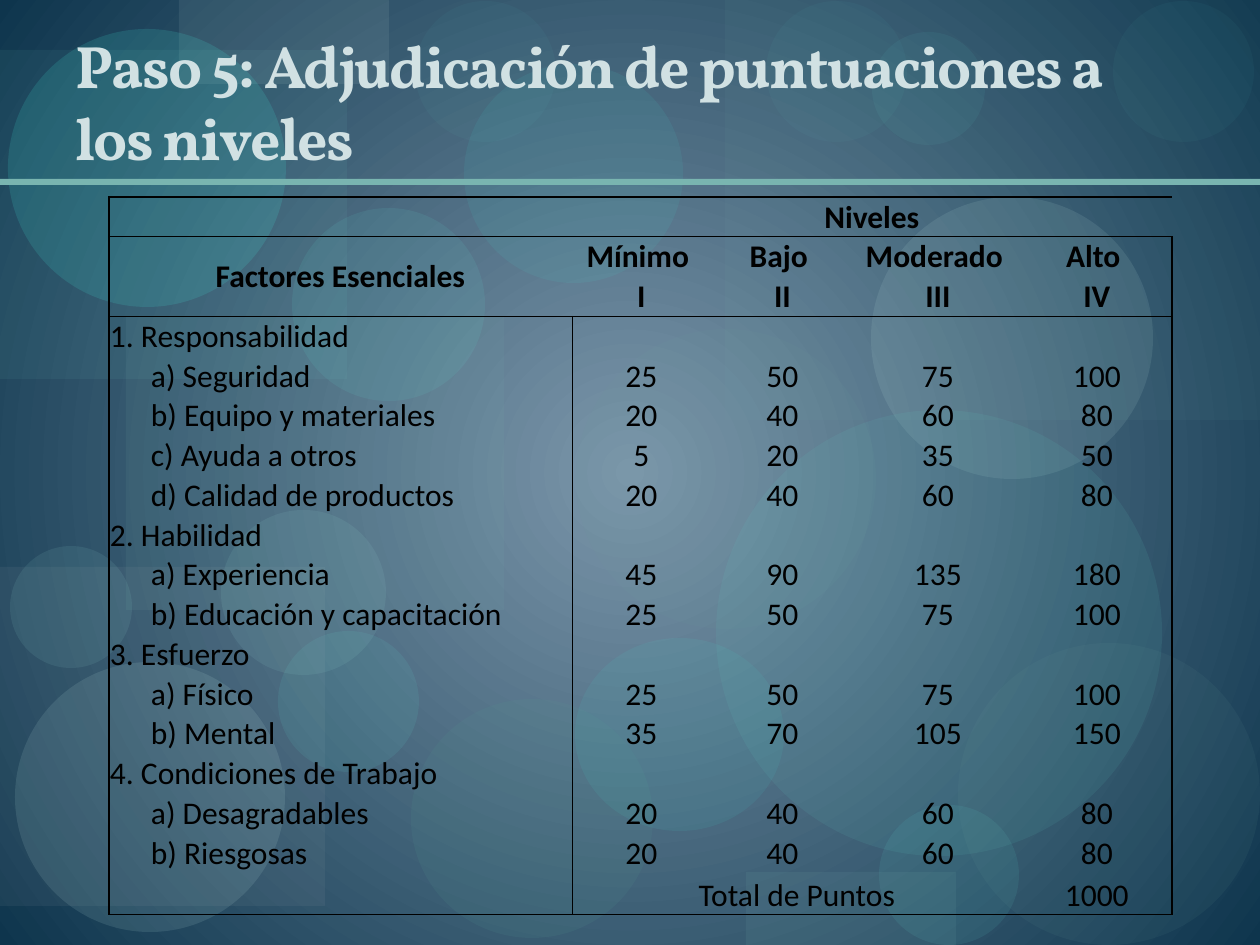
"""Build the slide on scoring the levels of each essential factor."""
from lxml import etree
from pptx import Presentation
from pptx import util as u
from pptx.dml.color import RGBColor
from pptx.enum import shapes, text
from pptx.oxml import parse_xml
from pptx.oxml.ns import nsdecls, qn

BLACK = RGBColor(0, 0, 0)
PALE = RGBColor(0xD1, 0xE1, 0xE3)
CORE = RGBColor(0x7B, 0x96, 0xAA)
EDGE = RGBColor(0x0E, 0x35, 0x4D)
SAGE = RGBColor(0x79, 0xB5, 0xB0)
TEAL = RGBColor(0x54, 0x97, 0x91)
GREY = RGBColor(0xB2, 0xB7, 0xBA)
MOSS = RGBColor(0x70, 0xA3, 0x9E)
AQUA = RGBColor(0x65, 0xE8, 0xDC)
MIST = RGBColor(0xC1, 0xE8, 0xE4)
CYAN = RGBColor(0x44, 0xEA, 0xDC)
MINT = RGBColor(0x77, 0xD6, 0xCE)
HAZE = RGBColor(0xBE, 0xD7, 0xD4)
FOAM = RGBColor(0x97, 0xDC, 0xD6)
JADE = RGBColor(0x61, 0xCD, 0xC4)

BOX, DOT = shapes.MSO_SHAPE.RECTANGLE, shapes.MSO_SHAPE.OVAL
LEFT, MID = text.PP_ALIGN.LEFT, text.PP_ALIGN.CENTER
LOW, HALF = text.MSO_ANCHOR.BOTTOM, text.MSO_ANCHOR.MIDDLE

DECOR = [
    (BOX, 126, 316, 378, 294, SAGE, 9),
    (DOT, 411, 699, 242, 239, TEAL, 13),
    (BOX, 725, 0, 535, 420, SAGE, 6),
    (BOX, 0, 567, 325, 339, GREY, 8),
    (DOT, 576, 329, 300, 300, MOSS, 8),
    (DOT, 879, 805, 140, 140, AQUA, 9),
    (DOT, 871, 197, 282, 282, MIST, 11),
    (DOT, 15, 662, 270, 270, MIST, 12),
    (DOT, 278, 631, 141, 141, AQUA, 9),
    (DOT, 575, 638, 209, 193, CYAN, 8),
    (BOX, 0, 50, 347, 329, MINT, 7),
    (BOX, 179, 0, 210, 84, HAZE, 10),
    (DOT, 8, 29, 278, 278, CYAN, 15),
    (DOT, 10, 546, 122, 122, FOAM, 10),
    (DOT, 292, 208, 193, 193, AQUA, 9),
    (DOT, 464, 64, 219, 219, CYAN, 8),
    (DOT, 716, 410, 446, 446, JADE, 10),
    (DOT, 766, 1, 141, 141, AQUA, 4),
    (DOT, 958, 643, 302, 302, MOSS, 8),
    (DOT, 221, 510, 165, 165, FOAM, 10),
    (DOT, 872, 32, 113, 113, AQUA, 6),
    (DOT, 1113, 1, 141, 141, AQUA, 4),
    (BOX, 746, 872, 210, 73, SAGE, 10),
    (DOT, 415, 1, 141, 141, AQUA, 4),
    (BOX, 0, 179, 1260, 6, SAGE, 100),
]
TITLE = "Paso 5: Adjudicación de puntuaciones a los niveles"
HEADS = [("Mínimo ", "I"), ("Bajo ", "II"), ("Moderado ", "III"), ("Alto ", "IV")]
GROUPS = [
    ("1. Responsabilidad", [
        ("a) Seguridad", 25, 50, 75, 100),
        ("b) Equipo y materiales", 20, 40, 60, 80),
        ("c) Ayuda a otros", 5, 20, 35, 50),
        ("d) Calidad de productos", 20, 40, 60, 80)]),
    ("2. Habilidad", [
        ("a) Experiencia", 45, 90, 135, 180),
        ("b) Educación y capacitación", 25, 50, 75, 100)]),
    ("3. Esfuerzo", [
        ("a) Físico", 25, 50, 75, 100),
        ("b) Mental", 35, 70, 105, 150)]),
    ("4. Condiciones de Trabajo", [
        ("a) Desagradables", 20, 40, 60, 80),
        ("b) Riesgosas", 20, 40, 60, 80)]),
]
TOTAL = ("Total de Puntos", 1000)
COLS = [41, 422, 139, 143, 168, 150]
TOP, TALL, LAST = 197, 718, 42


def px(n):
    return u.Emu(round(n * 914400 / 126))


def write(frame, words, size=18, font="Calibri", color=BLACK, bold=False,
          align=LEFT, track=0, lead=None):
    para = frame.paragraphs[0]
    para.alignment = align
    para.line_spacing = lead
    run = para.add_run()
    run.text = str(words)
    run.font.size, run.font.name, run.font.bold = u.Pt(size), font, bold
    run.font.color.rgb = color
    if track:
        run.font._element.set("spc", str(track))


def decor(slide):
    for kind, x, y, w, h, color, alpha in DECOR:
        shape = slide.shapes.add_shape(kind, px(x), px(y), px(w), px(h))
        shape.shadow.inherit = False
        shape.line.fill.background()
        shape.fill.solid()
        shape.fill.fore_color.rgb = color
        tint = shape._element.spPr.find(".//" + qn("a:srgbClr"))
        etree.SubElement(tint, qn("a:alpha")).set("val", str(alpha * 1000))


def backdrop(slide):
    fill = slide.background.fill
    fill.gradient()
    for stop, color in zip(fill.gradient_stops, (CORE, EDGE)):
        stop.color.rgb = color
    grad = slide.element.find(".//" + qn("a:gradFill"))
    grad.replace(grad.find(qn("a:lin")), parse_xml(
        f'<a:path {nsdecls("a")} path="circle">'
        '<a:fillToRect l="50000" t="50000" r="50000" b="50000"/></a:path>'))


def edge(cell, side, width):
    paint = f'<a:solidFill><a:srgbClr val="{BLACK}"/></a:solidFill>' if width else "<a:noFill/>"
    cell._tc.get_or_add_tcPr().append(parse_xml(
        f'<a:ln{side} {nsdecls("a")} w="{u.Pt(width)}">{paint}</a:ln{side}>'))


def rule(cut, end, inner):
    return 1 if cut in (0, end) else 0.5 if inner else 0


def grid(slide):
    rows = 4 + sum(1 + len(items) for _, items in GROUPS)
    frame = slide.shapes.add_table(rows, len(COLS), px(109), px(TOP), px(sum(COLS)), px(TALL))
    table = frame.table
    table.first_row = table.horz_banding = False
    style = frame._element.find(".//" + qn("a:tableStyleId"))
    style.text = "{2D5ABB26-0587-4C30-8999-92F81FD0307C}"
    for col, wide in zip(table.columns, COLS):
        col.width = px(wide)
    for r, row in enumerate(table.rows):
        row.height = px(LAST if r == rows - 1 else (TALL - LAST) / (rows - 1))
        for c, cell in enumerate(row.cells):
            for side, cut in (("L", c), ("R", c + 1)):
                edge(cell, side, rule(cut, len(COLS), cut == 2 and r > 2))
            for side, cut in (("T", r), ("B", r + 1)):
                edge(cell, side, rule(cut, rows, cut in (1, 3)))
            cell.fill.background()
            cell.margin_left = cell.margin_right = cell.margin_top = px(1)
            cell.margin_bottom = 0
            cell.vertical_anchor = LOW

    def put(r, c, words, down=0, over=0, anchor=LOW, **form):
        cell = table.cell(r, c)
        if down or over:
            cell.merge(table.cell(r + down, c + over))
        cell.vertical_anchor = anchor
        write(cell.text_frame, words, **form)

    head = dict(bold=True, align=MID)
    put(0, 2, "Niveles", over=3, **head)
    put(1, 0, "Factores Esenciales", down=1, over=1, anchor=HALF, **head)
    for c, (name, mark) in enumerate(HEADS, 2):
        put(1, c, name, anchor=HALF, **head)
        put(2, c, mark, **head)
    r = 3
    for name, items in GROUPS:
        put(r, 0, name, over=1)
        for r, (item, *marks) in enumerate(items, r + 1):
            put(r, 1, item)
            for c, mark in enumerate(marks, 2):
                put(r, c, mark, align=MID)
        r += 1
    put(r, 2, TOTAL[0], over=2, align=MID)
    put(r, 5, TOTAL[1], align=MID)


def main():
    deck = Presentation()
    deck.slide_width, deck.slide_height = px(1260), px(945)
    slide = deck.slides.add_slide(deck.slide_layouts[6])
    backdrop(slide)
    decor(slide)
    frame = slide.shapes.add_textbox(px(63), px(21), px(1134), px(158)).text_frame
    frame.word_wrap = True
    frame.vertical_anchor = LOW
    write(frame, TITLE, size=34.2, font="Vollkorn", color=PALE, bold=True, track=-100)
    grid(slide)
    deck.save("out.pptx")


if __name__ == "__main__":
    main()
